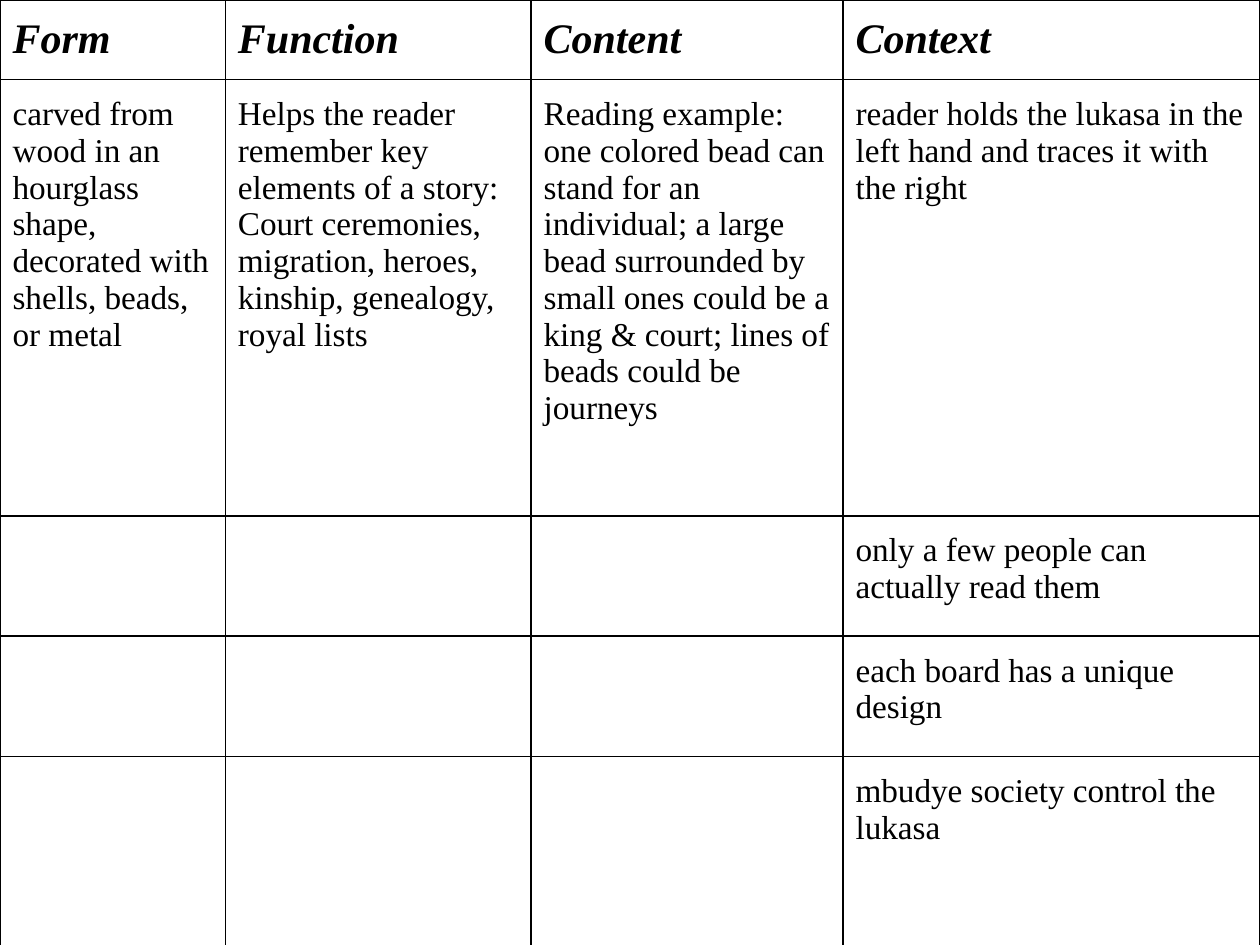
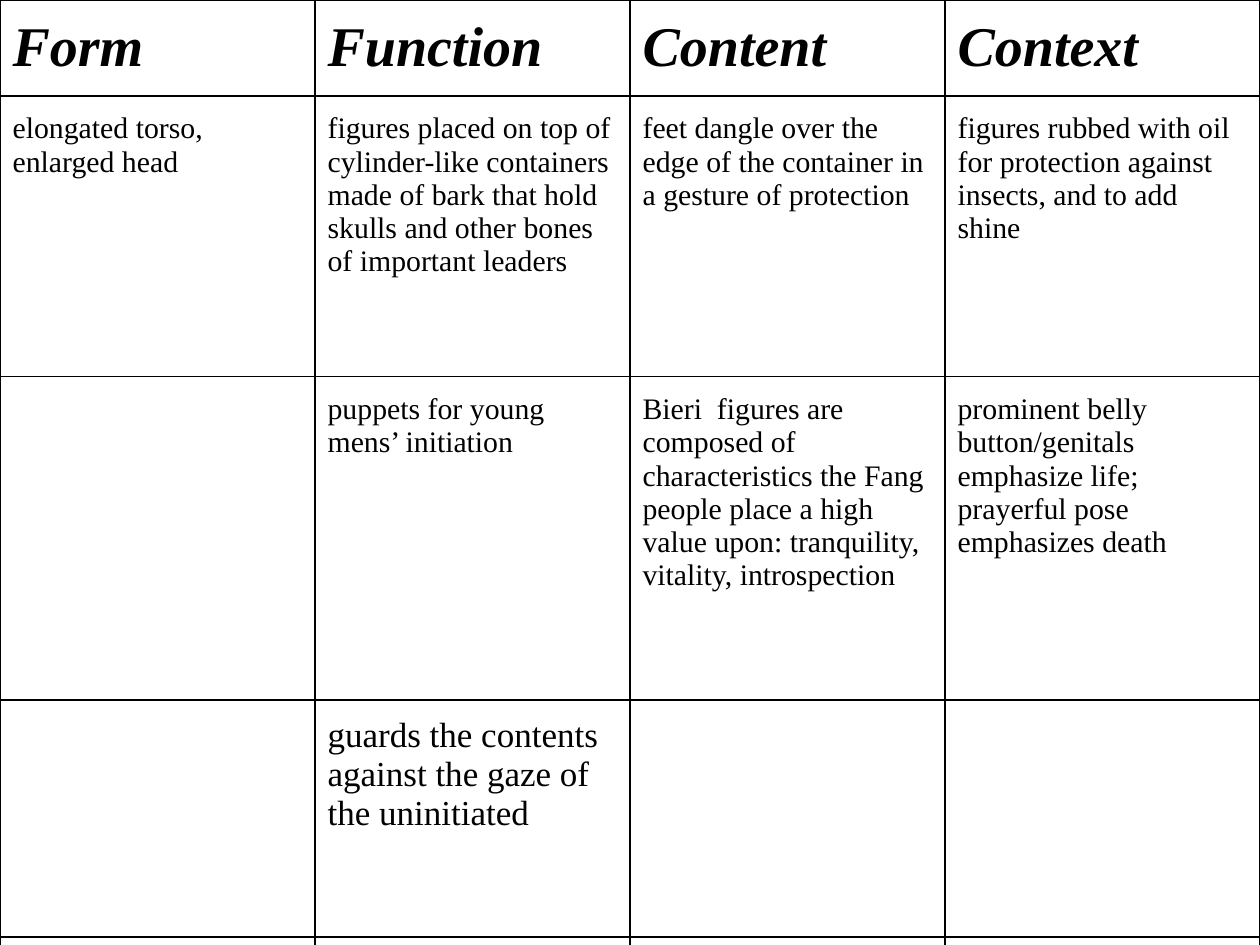
"""Build two slides of art-history comparison tables: form, function, content, context."""
from lxml import etree
from pptx import Presentation
from pptx.dml.color import RGBColor
from pptx.oxml.ns import qn
from pptx.util import Pt

COLORS = {"text": "000000", "border": "000000", "background": "FFFFFF"}
FONT = "Times New Roman"
BORDER_WIDTH = 1
BLANK_LAYOUT = 6
HEADERS = ["Form", "Function", "Content", "Context"]
MARGINS = {"margin_left": 7.2, "margin_right": 7.2, "margin_top": 9.36, "margin_bottom": 9.36}

TABLES = [
    {
        "widths": [128.75, 174.75, 178.25, 238.25],
        "heights": [45.5, 249.25, 68.75, 68.75, 110],
        "header_size": 24,
        "sizes": [19, 19, 19, 19],
        "rows": [
            [
                "carved from wood in an hourglass shape, decorated with shells, beads, or metal",
                "Helps the reader remember key elements of a story: Court ceremonies, migration, "
                "heroes, kinship, genealogy, royal lists",
                "Reading example: one colored bead can stand for an individual; a large bead "
                "surrounded by small ones could be a king & court; lines of beads could be journeys",
                "reader holds the lukasa in the left hand and traces it with the right",
            ],
            ["", "", "", "only a few people can actually read them"],
            ["", "", "", "each board has a unique design"],
            ["", "", "", "mbudye society control the lukasa"],
        ],
    },
    {
        "widths": [180, 180, 180, 180],
        "heights": [54.75, 160.5, 184.75, 135.5, 95],
        "header_size": 32,
        "sizes": [17, 17, 20, 20],
        "rows": [
            [
                "elongated torso, enlarged head",
                "figures placed on top of cylinder-like containers made of bark that hold skulls "
                "and other bones of important leaders",
                "feet dangle over the edge of the container in a gesture of protection",
                "figures rubbed with oil for protection against insects, and to add shine",
            ],
            [
                "",
                "puppets for young mens’ initiation",
                "Bieri  figures are composed of characteristics the Fang people place a high "
                "value upon: tranquility, vitality, introspection",
                "prominent belly button/genitals emphasize life; prayerful pose emphasizes death",
            ],
            ["", "guards the contents against the gaze of the uninitiated", "", ""],
            ["", "", "", ""],
        ],
    },
]


def set_borders(cell):
    tc_pr = cell._tc.get_or_add_tcPr()
    for side in ("a:lnL", "a:lnR", "a:lnT", "a:lnB"):
        ln = etree.SubElement(tc_pr, qn(side), w=str(Pt(BORDER_WIDTH)))
        fill = etree.SubElement(ln, qn("a:solidFill"))
        etree.SubElement(fill, qn("a:srgbClr"), val=COLORS["border"])


def fill_cell(cell, text, size, header):
    set_borders(cell)
    cell.fill.background()
    for name, value in MARGINS.items():
        setattr(cell, name, Pt(value))
    if not text:
        return
    r = cell.text_frame.paragraphs[0].add_run()
    r.text = text
    font_format = {"name": FONT, "size": Pt(size), "bold": header, "italic": header}
    for name, value in font_format.items():
        setattr(r.font, name, value)
    r.font.color.rgb = RGBColor.from_string(COLORS["text"])


def add_comparison(prs, data):
    s = prs.slides.add_slide(prs.slide_layouts[BLANK_LAYOUT])
    s.background.fill.solid()
    s.background.fill.fore_color.rgb = RGBColor.from_string(COLORS["background"])
    widths, heights = data["widths"], data["heights"]
    table = s.shapes.add_table(
        len(heights), len(widths), 0, 0, Pt(sum(widths)), Pt(sum(heights))
    ).table
    table.first_row = table.horz_banding = False
    for column, width in zip(table.columns, widths):
        column.width = Pt(width)
    for row, height in zip(table.rows, heights):
        row.height = Pt(height)
    sizes = [data["header_size"]] + data["sizes"]
    for i, (texts, size) in enumerate(zip([HEADERS] + data["rows"], sizes)):
        for j, text in enumerate(texts):
            fill_cell(table.cell(i, j), text, size, header=i == 0)


def main():
    prs = Presentation()
    prs.slide_width, prs.slide_height = Pt(720), Pt(540)
    for data in TABLES:
        add_comparison(prs, data)
    prs.save("out.pptx")


if __name__ == "__main__":
    main()
